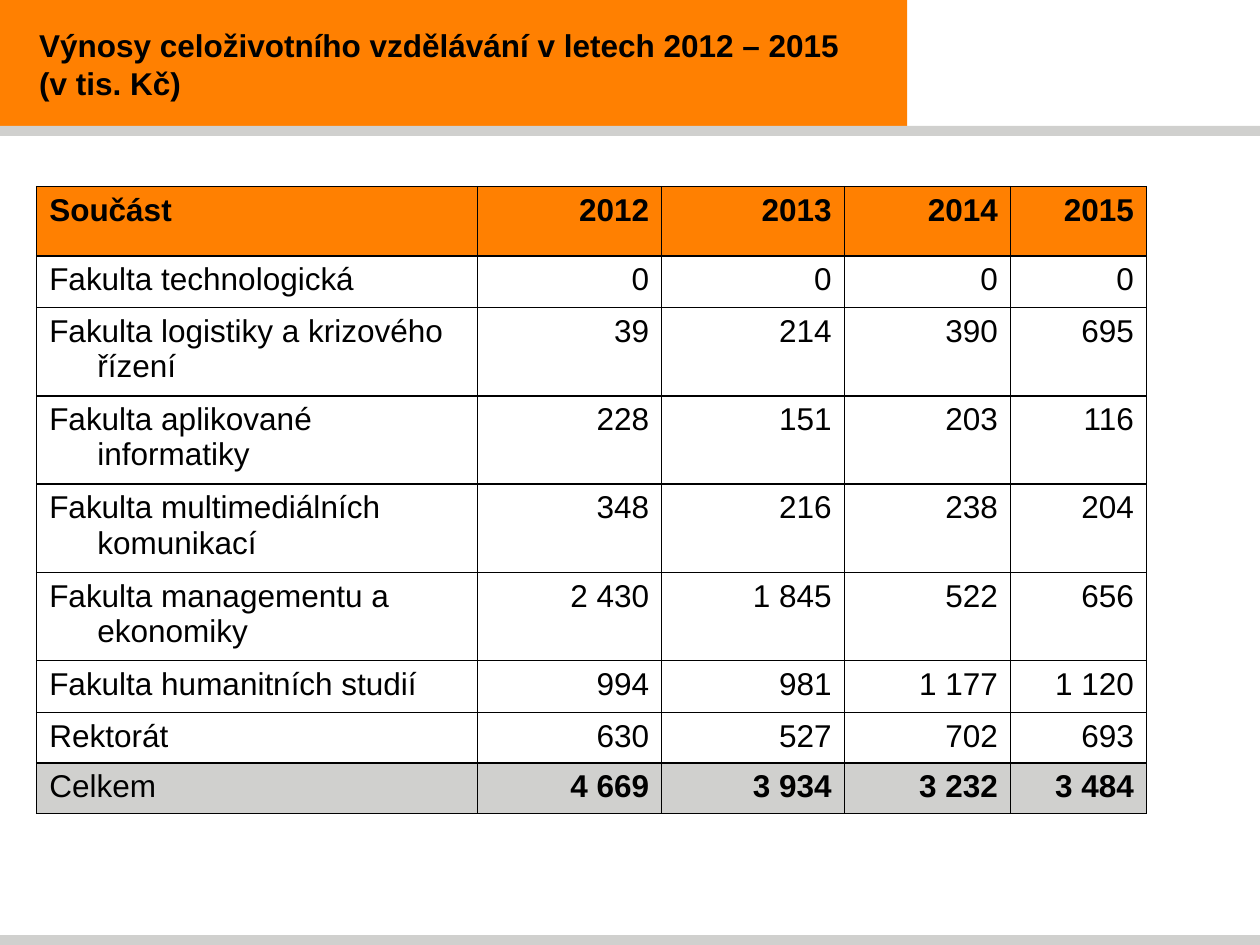
import pptx
import pptx.util
import pptx.dml.color
import pptx.enum.shapes
import pptx.enum.text
import pptx.oxml.ns
import lxml.etree
from pptx.util import Cm

COLORS = {"orange": "FF8001", "grey": "D0D0CE", "black": "000000"}
FONT = "Arial"
PAGE_WIDTH, PAGE_HEIGHT = 25.4, 19.05
BAND_WIDTH, BAND_HEIGHT = 18.29, 2.54
RULE_HEIGHT = 0.2
HANGING_INDENT = 0.97

TITLE = ["Výnosy celoživotního vzdělávání v letech 2012 – 2015", "(v tis. Kč)"]
COLUMN_WIDTHS = [8.89, 3.71, 3.68, 3.35, 2.74]
ROW_HEIGHTS = [1.4, 1.04] + [1.78] * 4 + [1.04, 1.02, 1.02]
REVENUES = [
    ["Součást", "2012", "2013", "2014", "2015"],
    ["Fakulta technologická", "0", "0", "0", "0"],
    ["Fakulta logistiky a krizového řízení", "39", "214", "390", "695"],
    ["Fakulta aplikované informatiky", "228", "151", "203", "116"],
    ["Fakulta multimediálních komunikací", "348", "216", "238", "204"],
    ["Fakulta managementu a ekonomiky", "2 430", "1 845", "522", "656"],
    ["Fakulta humanitních studií", "994", "981", "1 177", "1 120"],
    ["Rektorát", "630", "527", "702", "693"],
    ["Celkem", "4 669", "3 934", "3 232", "3 484"],
]


def rgb(name):
    return pptx.dml.color.RGBColor.from_string(COLORS[name])


def style_font(para, bold):
    para.font.name = FONT
    para.font.size = pptx.util.Pt(18)
    para.font.bold = bold
    para.font.color.rgb = rgb("black")


def add_bar(page, left, top, width, height, color):
    bar = page.shapes.add_shape(
        pptx.enum.shapes.MSO_SHAPE.RECTANGLE, Cm(left), Cm(top), Cm(width), Cm(height)
    )
    bar.shadow.inherit = False
    bar.fill.solid()
    bar.fill.fore_color.rgb = rgb(color)
    bar.line.fill.background()


def add_header(page, left, top, width, height):
    add_bar(page, left, top, width, height, "orange")
    add_bar(page, left, top + height, PAGE_WIDTH, RULE_HEIGHT, "grey")
    box = page.shapes.add_textbox(Cm(left), Cm(top), Cm(width), Cm(height + 0.05))
    frame = box.text_frame
    frame.word_wrap = True
    frame.vertical_anchor = pptx.enum.text.MSO_ANCHOR.MIDDLE
    frame.margin_left = Cm(0.79)
    frame.text = "\n".join(TITLE)
    for para in frame.paragraphs:
        style_font(para, True)


def add_footer(page, left, top, width, height):
    add_bar(page, left, top, width, height, "grey")


def add_borders(cell):
    properties = cell._tc.get_or_add_tcPr()
    qn = pptx.oxml.ns.qn
    for side in ("a:lnL", "a:lnR", "a:lnT", "a:lnB"):
        line = lxml.etree.SubElement(properties, qn(side), w=str(pptx.util.Pt(1)))
        fill = lxml.etree.SubElement(line, qn("a:solidFill"))
        lxml.etree.SubElement(fill, qn("a:srgbClr"), val=COLORS["black"])


def fill_cell(cell, text, is_number, bold, color):
    add_borders(cell)
    if color:
        cell.fill.solid()
        cell.fill.fore_color.rgb = rgb(color)
    else:
        cell.fill.background()
    cell.text = text
    para = cell.text_frame.paragraphs[0]
    indent = Cm(HANGING_INDENT)
    para._p.get_or_add_pPr().set("marL", str(indent))
    para._p.get_or_add_pPr().set("indent", str(-indent))
    if is_number:
        para.alignment = pptx.enum.text.PP_ALIGN.RIGHT
    style_font(para, bold)


def add_revenue_table(page, left, top):
    table = page.shapes.add_table(
        len(REVENUES), len(COLUMN_WIDTHS), Cm(left), Cm(top),
        Cm(sum(COLUMN_WIDTHS)), Cm(sum(ROW_HEIGHTS)),
    ).table
    for column, width in zip(table.columns, COLUMN_WIDTHS):
        column.width = Cm(width)
    last = len(REVENUES) - 1
    row_colors = {0: "orange", last: "grey"}
    for r, (values, height) in enumerate(zip(REVENUES, ROW_HEIGHTS)):
        table.rows[r].height = Cm(height)
        for c, text in enumerate(values):
            bold = r == 0 or (r == last and c > 0)
            fill_cell(table.cell(r, c), text, c > 0, bold, row_colors.get(r))


def main():
    deck = pptx.Presentation()
    deck.slide_width, deck.slide_height = Cm(PAGE_WIDTH), Cm(PAGE_HEIGHT)
    page = deck.slides.add_slide(deck.slide_layouts[6])
    add_header(page, 0, 0, BAND_WIDTH, BAND_HEIGHT)
    add_footer(page, 0, PAGE_HEIGHT - RULE_HEIGHT, PAGE_WIDTH, RULE_HEIGHT)
    add_revenue_table(page, 0.74, 3.76)
    deck.save("out.pptx")


if __name__ == "__main__":
    main()
